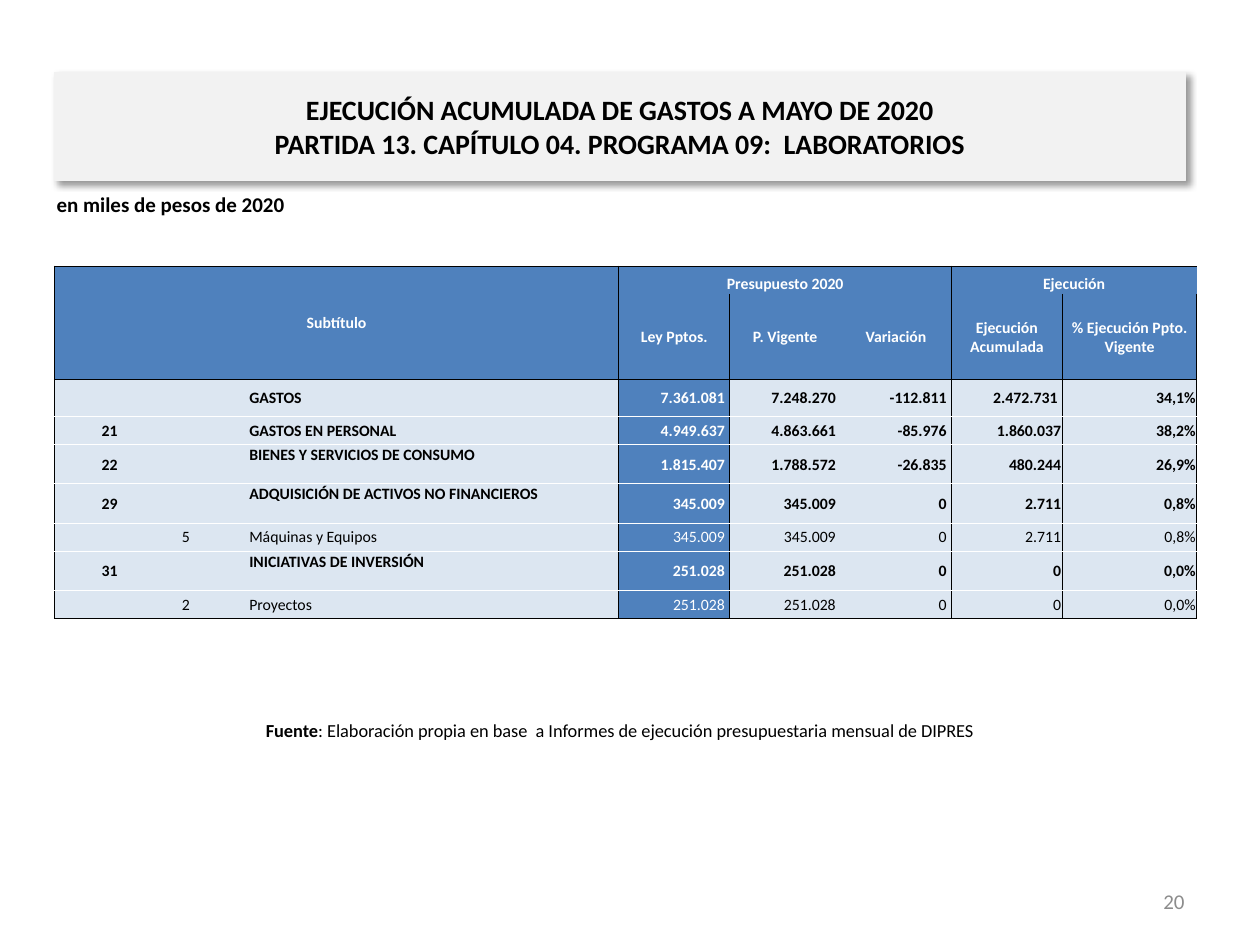
from lxml.etree import SubElement as Sub
from pptx import Presentation
from pptx.dml.color import RGBColor as RGB
from pptx.enum.text import MSO_ANCHOR as Anchor, PP_ALIGN as Align
from pptx.oxml.ns import qn
from pptx.util import Pt

COLORS = {"ink": "000000", "white": "FFFFFF", "head": "4F81BD",
          "body": "DCE6F1", "band": "F2F2F2", "page": "8C8C8C"}
PLAIN = "{2D5ABB26-0587-4C30-8999-92F81FD0307C}"  # table style without grid
WIDTHS = [63.5, 23.75, 23.75, 212.25, 63.5, 63.5, 63.5, 63.5, 77]
HEADS = ["Ley Pptos.", "P. Vigente", "Variación",
         "Ejecución Acumulada", "% Ejecución Ppto. Vigente"]
# height, code, item, name, then the five figures
ROWS = [
    (21, "", "", "GASTOS", "7.361.081", "7.248.270", "-112.811", "2.472.731", "34,1%"),
    (16, "21", "", "GASTOS EN PERSONAL", "4.949.637", "4.863.661", "-85.976", "1.860.037", "38,2%"),
    (22.5, "22", "", "BIENES Y SERVICIOS DE CONSUMO", "1.815.407", "1.788.572", "-26.835", "480.244", "26,9%"),
    (22.5, "29", "", "ADQUISICIÓN DE ACTIVOS NO FINANCIEROS", "345.009", "345.009", "0", "2.711", "0,8%"),
    (16, "", "5", "Máquinas y Equipos", "345.009", "345.009", "0", "2.711", "0,8%"),
    (22.5, "31", "", "INICIATIVAS DE INVERSIÓN", "251.028", "251.028", "0", "0", "0,0%"),
    (16, "", "2", "Proyectos", "251.028", "251.028", "0", "0", "0,0%"),
]
HEIGHTS = [16, 49] + [row[0] for row in ROWS]


def style(par, size, color="ink", bold=None, align=Align.LEFT):
    par.alignment = align
    font = par.font
    font.name, font.size, font.bold = "Calibri", Pt(size), bold
    font.color.rgb = RGB.from_string(COLORS[color])


def add_title(slide, x, y, w, h):
    title = slide.shapes.title
    title.left, title.top, title.width, title.height = map(Pt, (x, y, w, h))
    title.fill.solid()
    title.fill.fore_color.rgb = RGB.from_string(COLORS["band"])
    title.line.color.rgb = RGB.from_string(COLORS["band"])
    title.line.width = Pt(0.75)
    # Soft shadow to the lower right
    effects = Sub(title._element.spPr, qn("a:effectLst"))
    shadow = Sub(effects, qn("a:outerShdw"), blurRad=str(Pt(4)), dist=str(Pt(3)),
                 dir=str(45 * 60000), algn="tl", rotWithShape="0")
    tint = Sub(shadow, qn("a:srgbClr"), val=COLORS["ink"])
    Sub(tint, qn("a:alpha"), val="40000")
    frame = title.text_frame
    frame.word_wrap = True
    frame.vertical_anchor = Anchor.MIDDLE
    frame.text = ("EJECUCIÓN ACUMULADA DE GASTOS A MAYO DE 2020\v"
                  "PARTIDA 13. CAPÍTULO 04. PROGRAMA 09:  LABORATORIOS")
    style(frame.paragraphs[0], 16, bold=True, align=Align.CENTER)


def add_text(slide, x, y, w, h, text, anchor=Anchor.MIDDLE, **look):
    frame = slide.shapes.add_textbox(Pt(x), Pt(y), Pt(w), Pt(h)).text_frame
    frame.word_wrap = True
    frame.vertical_anchor = anchor
    par = frame.paragraphs[0]
    par.text = text
    style(par, **look)
    return par


def add_source(slide, x, y, w, h):
    par = add_text(slide, x, y, w, h, "", size=10.5, align=Align.CENTER)
    label = par.add_run()
    label.text, label.font.bold = "Fuente", True
    par.add_run().text = (": Elaboración propia en base  a Informes de ejecución "
                          "presupuestaria mensual de DIPRES")


def rule(cell, edges):
    props = cell._tc.get_or_add_tcPr()
    for spot, (side, color) in enumerate(edges.items()):
        line = Sub(props, qn("a:ln" + side), w=str(Pt(0.5)))
        Sub(Sub(line, qn("a:solidFill")), qn("a:srgbClr"), val=COLORS[color])
        props.insert(spot, line)


def borders(row, col):
    last = len(HEIGHTS) - 1
    edges = {}
    if col in (0, 4, 7):
        edges["L"] = "ink"
    if col in (3, 6, 8):
        edges["R"] = "ink"
    if row in (0, 2):
        edges["T"] = "ink"
    elif row > 2:
        edges["T"] = "white"
    if row in (1, last):
        edges["B"] = "ink"
    elif row > 1:
        edges["B"] = "white"
    return edges


def fill_cell(cell, text, fill, color, bold, align, anchor=Anchor.MIDDLE, right=0.7):
    cell.margin_left = cell.margin_top = Pt(0.7)
    cell.margin_right, cell.margin_bottom = Pt(right), 0
    cell.vertical_anchor = anchor
    cell.fill.solid()
    cell.fill.fore_color.rgb = RGB.from_string(COLORS[fill])
    par = cell.text_frame.paragraphs[0]
    par.text = text
    style(par, 9, color, bold, align)
    if not text:  # keeps an empty cell from stretching its row
        Sub(par._p, qn("a:endParaRPr"), sz="900")


def add_budget(slide, x, y, w):
    table = slide.shapes.add_table(len(HEIGHTS), len(WIDTHS), Pt(x), Pt(y),
                                   Pt(w), Pt(sum(HEIGHTS))).table
    table.first_row = table.horz_banding = False
    table._tbl.tblPr.find(qn("a:tableStyleId")).text = PLAIN
    for col, width in zip(table.columns, WIDTHS):
        col.width = Pt(width * w / sum(WIDTHS))
    for row, height in zip(table.rows, HEIGHTS):
        row.height = Pt(height)

    # Header
    tops = {0: "Subtítulo", 4: "Presupuesto 2020", 7: "Ejecución"}
    for col in range(len(WIDTHS)):
        fill_cell(table.cell(0, col), tops.get(col, ""), "head", "white", True,
                  Align.CENTER, Anchor.BOTTOM if col else Anchor.MIDDLE)
        fill_cell(table.cell(1, col), HEADS[col - 4] if col > 3 else "",
                  "head", "white", True, Align.CENTER)
    for start, end in (((0, 0), (1, 3)), ((0, 4), (0, 6)), ((0, 7), (0, 8))):
        table.cell(*start).merge(table.cell(*end))

    # Body
    for r, (height, code, item, name, *sums) in enumerate(ROWS, 2):
        bold = not item
        for c, text in enumerate([code, item, "", name, *sums]):
            law = c == 4
            align = (Align.CENTER if c < 3 else
                     Align.JUSTIFY if c == 3 else Align.RIGHT)
            high = c == 3 and height > 22
            wide = c in (4, 5, 6) or (c == 7 and r == 2)
            fill_cell(table.cell(r, c), text, "head" if law else "body",
                      "white" if law else "ink", bold, align,
                      Anchor.TOP if high else Anchor.MIDDLE, 2.75 if wide else 0.7)

    for r in range(len(HEIGHTS)):
        for c in range(len(WIDTHS)):
            rule(table.cell(r, c), borders(r, c))


def main():
    deck = Presentation()
    deck.slide_width, deck.slide_height = Pt(720), Pt(540)
    slide = deck.slides.add_slide(deck.slide_layouts[5])
    add_source(slide, 31, 406, 646.5, 22.5)
    add_text(slide, 516, 500.5, 168, 28.75, "20", size=12, color="page",
             align=Align.RIGHT)
    add_text(slide, 25.25, 106, 607.5, 22.5, "en miles de pesos de 2020",
             Anchor.TOP, size=12, bold=True)
    add_title(slide, 31, 41.5, 646.5, 61.5)
    add_budget(slide, 31, 152, 653)
    deck.save("out.pptx")


if __name__ == "__main__":
    main()
